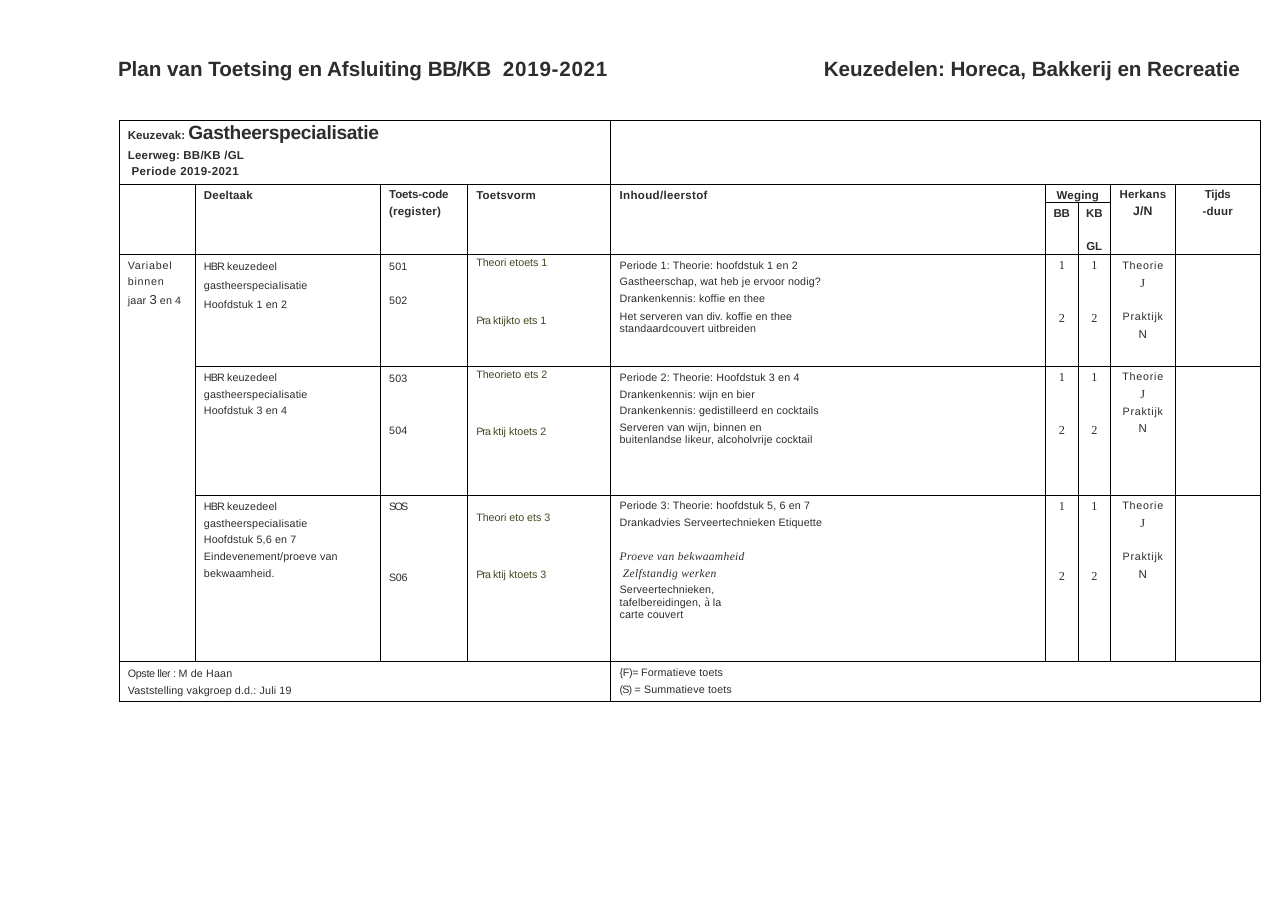
from dataclasses import dataclass, replace

from lxml.etree import SubElement
from pptx import Presentation
from pptx.dml.color import RGBColor
from pptx.enum.text import MSO_ANCHOR, MSO_AUTO_SIZE, PP_ALIGN
from pptx.oxml.ns import qn
from pptx.util import Inches, Pt

INK = RGBColor(0x2D, 0x2D, 0x2D)
OLIVE = RGBColor(0x42, 0x48, 0x1F)
BLACK = RGBColor(0, 0, 0)
COLS = [0.69, 1.68, 0.79, 1.3, 3.94, 0.3, 0.29, 0.59, 0.77]
ROWS = [0.58, 0.17, 0.47, 1.01, 1.17, 1.51, 0.36]
SPANS = [(0, 0, 0, 3), (0, 4, 0, 8), (1, 5, 1, 6), (3, 0, 5, 0),
         (6, 0, 6, 3), (6, 4, 6, 8)]
SPANS += [(1, col, 2, col) for col in (0, 1, 2, 3, 4, 7, 8)]


@dataclass(frozen=True)
class Style:
    """Looks of a run; sizes and letter gaps are in points."""
    size: float = 7
    gap: float = 0.1
    bold: bool = False
    slant: bool = False
    font: str = "Arial"
    ink: RGBColor = INK


BODY = Style()
TIGHT = replace(BODY, gap=-0.5)
WIDE = replace(BODY, gap=0.5)
FORM = replace(BODY, gap=0, ink=OLIVE)
PRA = replace(FORM, gap=-0.6)
HEAD = Style(7.5, 0.1, bold=True)
NAME = Style(12.5, -0.2, bold=True)
DIGIT = Style(8, 0, font="Times New Roman")
PROOF = Style(7.5, 0.2, slant=True, font="Times New Roman")
TITLE = Style(13.5, 0, bold=True)
LETTER = Style(7.5, 0)


def unit(first, *rest):
    """Give the lines of a unit: its first line has a narrow HBR."""
    return [(first, "HBR ", TIGHT, "keuzedeel", BODY)] + [
        (mid, text, BODY) for mid, text in rest]


def plain(*lines):
    """Give body lines from pairs of middle and text."""
    return [(mid, text, BODY) for mid, text in lines]


def form(mid, theory, last, end):
    """Give the two test forms of a period."""
    return [(mid, theory, FORM), (last, "Pra ", PRA, end, FORM)]


def marks(last):
    """Give the weights 1 and 2."""
    return [(7.2, "1", DIGIT), (last, "2", DIGIT)]


def resit(third, last):
    """Give the resit rule of theory and practice."""
    return [(7.2, "Theorie", WIDE), (18.9, "J", DIGIT),
            (third, "Praktijk", WIDE), (last, "N", LETTER)]


CELLS = {
    (0, 0): [(8.7, "Keuzevak: ", replace(HEAD, gap=0), "Gastheerspecialisatie", NAME),
             (23.5, "Leerweg: BB/KB /GL", HEAD),
             (34, " Periode 2019-2021", replace(HEAD, gap=0.25))],
    (1, 1): [(7.2, "Deeltaak", HEAD)],
    (1, 2): [(6.8, "Toets-code", replace(HEAD, gap=-0.1)), (18.3, "(register)", HEAD)],
    (1, 3): [(7.2, "Toetsvorm", HEAD)],
    (1, 4): [(7.2, "Inhoud/leerstof", replace(HEAD, gap=0.2))],
    (1, 5): [(7.4, "Weging", HEAD)],
    (1, 7): [(6.8, "Herkans", HEAD), (18.3, "J/N", replace(HEAD, size=8))],
    (1, 8): [(6.8, "Tijds", replace(HEAD, gap=-0.1)), (18.3, "-duur", HEAD)],
    (2, 5): [(7.2, "BB", replace(HEAD, gap=-0.2))],
    (2, 6): [(7.2, "KB", replace(HEAD, gap=-0.1)), (28.7, "GL", replace(HEAD, gap=-0.1))],
    (3, 0): [(7.2, "Variabel", WIDE), (18.1, "binnen", WIDE),
             (30, "jaar ", BODY, "3 ", Style(8.5, -0.3), "en 4", BODY)],
    (3, 1): unit(7.8, (20.9, "gastheerspeciaIisatie"), (33.3, "Hoofdstuk 1 en 2")),
    (3, 2): plain((8.2, "501"), (30.7, "502")),
    (3, 3): form(5.4, "Theori etoets 1", 43.5, "ktijkto ets 1"),
    (3, 4): plain((7.2, "Periode 1: Theorie: hoofdstuk 1 en 2"),
                  (18.3, "Gastheerschap, wat heb je ervoor nodig?"),
                  (29.6, "Drankenkennis: koffie en thee"),
                  (41.3, "Het serveren van div. koffie en thee"),
                  (49.3, "standaardcouvert uitbreiden")),
    (3, 5): marks(41.8),
    (3, 6): marks(41.8),
    (3, 7): resit(41.1, 53),
    (4, 1): unit(7.8, (18.9, "gastheerspeciaIisatie"), (30, "Hoofdstuk 3 en 4")),
    (4, 2): plain((8.5, "503"), (42.4, "504")),
    (4, 3): form(5.9, "Theorieto ets 2", 43.1, "ktij ktoets 2"),
    (4, 4): plain((7.8, "Periode 2: Theorie: Hoofdstuk 3 en 4"),
                  (18.9, "Drankenkennis: wijn en bier"),
                  (30, "Drankenkennis: gedistilleerd en cocktails"),
                  (41.1, "Serveren van wijn, binnen en"),
                  (49.2, "buitenlandse likeur, alcoholvrije cocktail")),
    (4, 5): marks(42.4),
    (4, 6): marks(42.4),
    (4, 7): resit(30.7, 41.8),
    (5, 1): unit(7.8, (18.9, "gastheerspeciaIisatie"), (30, "Hoofdstuk 5,6 en 7"),
                 (41.1, "Eindevenement/proeve van"), (52.2, "bekwaamheid.")),
    (5, 2): [(7.8, "SOS", replace(BODY, gap=-1.1)),
             (54.2, "S06", replace(BODY, gap=-0.2))],
    (5, 3): form(15, "Theori eto ets 3", 52.2, "ktij ktoets 3"),
    (5, 4): plain((7.2, "Periode 3: Theorie: hoofdstuk 5, 6 en 7"),
                  (18.3, "Drankadvies Serveertechnieken Etiquette"))
    + [(41.1, "Proeve van bekwaamheid", PROOF), (52.2, " Zelfstandig werken", PROOF),
       (62.7, "Serveertechnieken,", BODY),
       (71.2, "tafelbereidingen, ", BODY, "à ", replace(DIGIT, gap=-0.2), "la", BODY),
       (79.7, "carte couvert", BODY)],
    (5, 5): marks(53.5),
    (5, 6): marks(53.5),
    (5, 7): resit(41.1, 52.9),
    (6, 0): [(7.8, "Opste ller : ", replace(BODY, gap=-0.2), "M de Haan", BODY),
             (19.6, "Vaststelling vakgroep d.d.: Juli 19", BODY)],
    (6, 4): [(7.2, "{F)= ", replace(BODY, gap=-0.2), "Formatieve toets", BODY),
             (18.9, "(S) ", TIGHT, "= Summatieve toets", BODY)],
}


def paint(run, style):
    """Format a run."""
    font = run.font
    font.name, font.size = style.font, Pt(style.size)
    font.bold, font.italic = style.bold, style.slant
    font.color.rgb = style.ink
    run._r.get_or_add_rPr().set("spc", str(round(style.gap * 100)))


def fill(para, parts):
    """Write pairs of text and style into a paragraph."""
    for text, style in zip(parts[::2], parts[1::2]):
        run = para.add_run()
        run.text = text
        paint(run, style)


def stack(cell, lines, align):
    """Set lines in a cell, each at its middle below the cell's top."""
    frame, low = cell.text_frame, 0
    for pos, (mid, *parts) in enumerate(lines):
        para = frame.add_paragraph() if pos else frame.paragraphs[0]
        tall = 1.15 * max(style.size for style in parts[1::2])
        space = Pt(max(0, mid - tall / 2 - low))
        if pos:
            para.space_before = space
        else:
            cell.margin_top = space
        para.alignment = align
        fill(para, parts)
        low = max(low, mid - tall / 2) + tall


def frame_cell(cell):
    """Give a cell black edges, no fill and no margins."""
    props = cell._tc.get_or_add_tcPr()
    for side in ("lnL", "lnR", "lnT", "lnB"):
        line = SubElement(props, qn("a:" + side), w=str(Pt(0.75)))
        SubElement(SubElement(line, qn("a:solidFill")), qn("a:srgbClr"), val=str(BLACK))
    cell.fill.background()
    cell.margin_left = cell.margin_right = cell.margin_top = cell.margin_bottom = 0
    cell.text_frame.paragraphs[0]._p.get_or_add_endParaRPr().set("sz", "700")


def draw_plan(slide, left, top):
    """Draw the test plan table."""
    table = slide.shapes.add_table(
        len(ROWS), len(COLS), Inches(left), Inches(top),
        Inches(sum(COLS)), Inches(sum(ROWS))).table
    table.first_row = table.horz_banding = False
    for col, width in zip(table.columns, COLS):
        col.width = Inches(width)
    for row, height in zip(table.rows, ROWS):
        row.height = Inches(height)
    for cell in table.iter_cells():
        frame_cell(cell)
    for row, col, last, end in SPANS:
        table.cell(row, col).merge(table.cell(last, end))
    for (row, col), lines in CELLS.items():
        cell = table.cell(row, col)
        if col < 5:
            cell.margin_left = Inches(0.08)
        stack(cell, lines, PP_ALIGN.LEFT if col < 5 else PP_ALIGN.CENTER)


def draw_head(shape, left, width, *parts):
    """Place and fill one heading at the top of the page."""
    shape.left, shape.top = Inches(left), Inches(0.5)
    shape.width, shape.height = Inches(width), Inches(0.25)
    frame = shape.text_frame
    frame.margin_left = frame.margin_right = frame.margin_bottom = 0
    frame.margin_top = Inches(0.01)
    frame.word_wrap, frame.auto_size = False, MSO_AUTO_SIZE.NONE
    frame.vertical_anchor = MSO_ANCHOR.TOP
    para = frame.paragraphs[0]
    para.alignment = PP_ALIGN.LEFT
    fill(para, parts)


def main():
    """Build the slide."""
    deck = Presentation()
    deck.slide_width, deck.slide_height = Inches(11.68), Inches(8.27)
    slide = deck.slides.add_slide(deck.slide_layouts[5])
    draw_head(slide.shapes.title, 1.07, 4.58,
              "Plan van Toetsing en Afsluiting ", TITLE,
              "BB/KB ", replace(TITLE, gap=-0.3), " 2019-2021", replace(TITLE, gap=0.5))
    draw_head(slide.shapes.add_textbox(0, 0, 0, 0), 7.47, 3.88,
              "Keuzedelen: Horeca, Bakkerij en Recreatie", TITLE)
    draw_plan(slide, 1.08, 1.09)
    deck.save("out.pptx")


if __name__ == "__main__":
    main()
